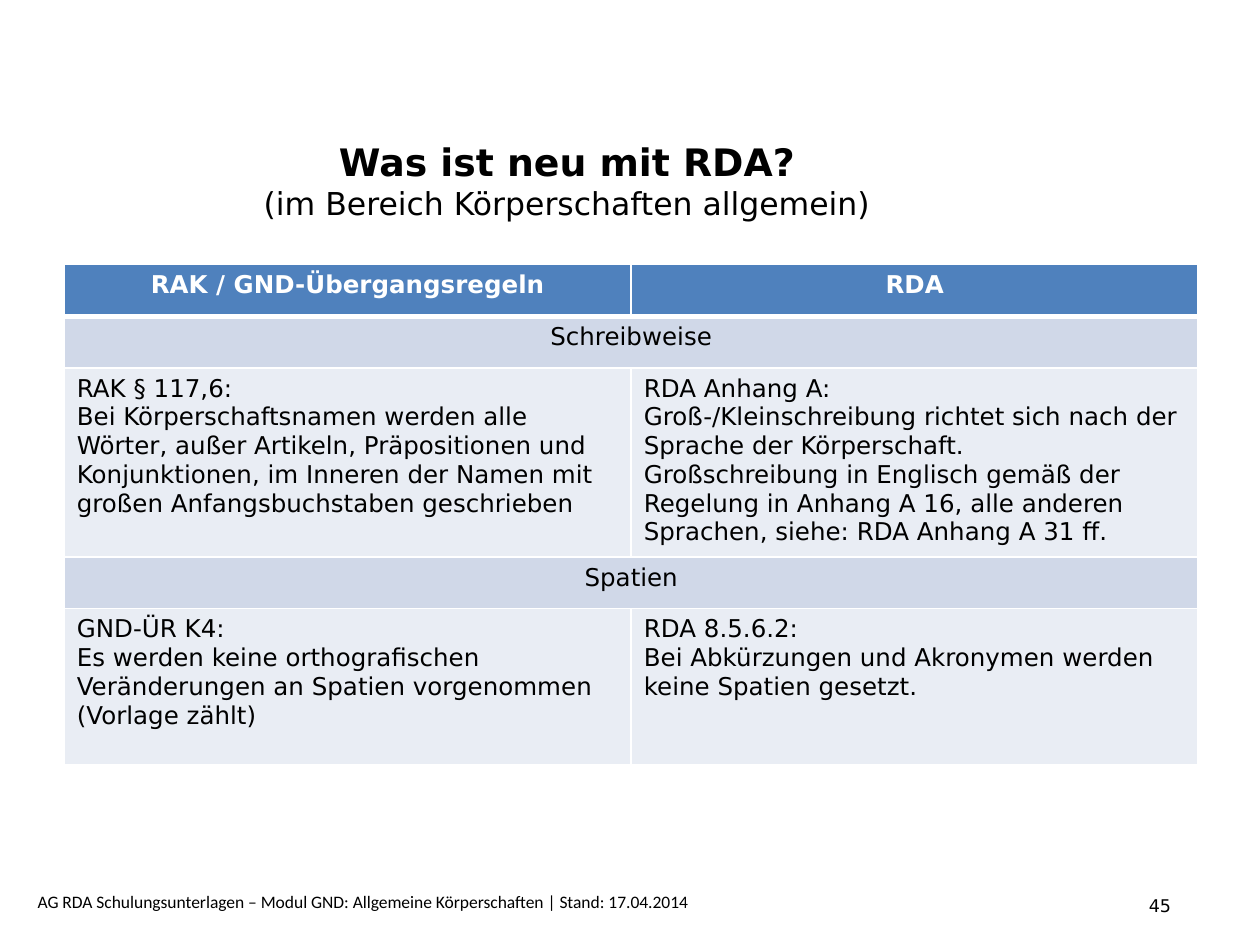
from dataclasses import dataclass

from lxml.etree import SubElement
from pptx import Presentation
from pptx.dml.color import RGBColor as RGB
from pptx.enum.text import MSO_ANCHOR, MSO_AUTO_SIZE, PP_ALIGN
from pptx.oxml.ns import qn
from pptx.util import Inches, Pt


@dataclass(frozen=True)
class Theme:
    font: str = "DejaVu Sans"
    footer_font: str = "Calibri"
    text: str = "000000"
    white: str = "FFFFFF"
    header: str = "4F81BD"
    section: str = "D0D8E8"
    body: str = "E9EDF4"
    title_size: float = 21.6
    subtitle_size: float = 18
    table_size: float = 14
    footer_size: float = 10


THEME = Theme()

HEADINGS = ["RAK / GND-Übergangsregeln", "RDA"]
SECTIONS = [
    ("Schreibweise", 1.47, [
        ["RAK § 117,6:",
         "Bei Körperschaftsnamen werden alle Wörter, außer Artikeln, Präpositionen und "
         "Konjunktionen, im Inneren der Namen mit großen Anfangsbuchstaben geschrieben"],
        ["RDA Anhang A:",
         "Groß-/Kleinschreibung richtet sich nach der Sprache der Körperschaft.",
         "Großschreibung in Englisch gemäß der Regelung in Anhang A 16, alle anderen "
         "Sprachen, siehe: RDA Anhang A 31 ff."],
    ]),
    ("Spatien", 1.24, [
        ["GND-ÜR K4:",
         "Es werden keine orthografischen Veränderungen an Spatien vorgenommen "
         "(Vorlage zählt)"],
        ["RDA 8.5.6.2:",
         "Bei Abkürzungen und Akronymen werden keine Spatien gesetzt."],
    ]),
]
ROW_HEIGHT = 0.41


def add_run(p, text, size, color=THEME.text, bold=False, font=THEME.font):
    r = p.add_run()
    r.text = text
    r.font.name = font
    r.font.size = Pt(size)
    r.font.bold = bold
    r.font.color.rgb = RGB.from_string(color)


def add_title(s, title, subtitle):
    sp = s.shapes.title
    sp.left, sp.top, sp.width, sp.height = (Inches(v) for v in (0, 1.08, 9, 0.7))
    tf = sp.text_frame
    tf.word_wrap = True
    tf.auto_size = MSO_AUTO_SIZE.NONE
    tf.vertical_anchor = MSO_ANCHOR.MIDDLE
    p = tf.paragraphs[0]
    p.alignment = PP_ALIGN.CENTER
    add_run(p, title, THEME.title_size, bold=True)
    p.add_line_break()
    add_run(p, subtitle, THEME.subtitle_size)


def add_footer_text(s, text, left, top, width, height, font):
    tf = s.shapes.add_textbox(*(Inches(v) for v in (left, top, width, height))).text_frame
    tf.word_wrap = True
    add_run(tf.paragraphs[0], text, THEME.footer_size, font=font)


def set_borders(cell, top=1, bottom=1):
    """Draw white lines around a cell; widths are in points."""
    tc_pr = cell._tc.get_or_add_tcPr()
    for side, width in (("L", 1), ("R", 1), ("T", top), ("B", bottom)):
        ln = SubElement(tc_pr, qn(f"a:ln{side}"), w=str(Pt(width)))
        fill = SubElement(ln, qn("a:solidFill"))
        SubElement(fill, qn("a:srgbClr"), val=THEME.white)


def fill_cell(cell, lines, fill, color=THEME.text, bold=False, align=PP_ALIGN.LEFT):
    cell.fill.solid()
    cell.fill.fore_color.rgb = RGB.from_string(fill)
    tf = cell.text_frame
    for i, line in enumerate(lines):
        p = tf.add_paragraph() if i else tf.paragraphs[0]
        p.alignment = align
        add_run(p, line, THEME.table_size, color, bold)


def add_comparison(s):
    heights = [ROW_HEIGHT]
    for _, height, _ in SECTIONS:
        heights += [ROW_HEIGHT, height]
    table = s.shapes.add_table(len(heights), len(HEADINGS), Inches(0.51), Inches(2.1),
                               Inches(9), Inches(sum(heights))).table
    for i, height in enumerate(heights):
        table.rows[i].height = Inches(height)
        for cell in table.rows[i].cells:
            set_borders(cell, top=3 if i == 1 else 1, bottom=3 if i == 0 else 1)

    for col, heading in enumerate(HEADINGS):
        fill_cell(table.cell(0, col), [heading], THEME.header, THEME.white, True,
                  PP_ALIGN.CENTER)
    for i, (name, _, columns) in enumerate(SECTIONS):
        row = 1 + 2 * i
        table.cell(row, 0).merge(table.cell(row, 1))
        fill_cell(table.cell(row, 0), [name], THEME.section, align=PP_ALIGN.CENTER)
        for col, lines in enumerate(columns):
            fill_cell(table.cell(row + 1, col), lines, THEME.body)


def main():
    prs = Presentation()
    prs.slide_width, prs.slide_height = Inches(10), Inches(7.5)
    s = prs.slides.add_slide(prs.slide_layouts[5])
    add_footer_text(s, "45", 9.02, 7.05, 0.79, 0.32, THEME.font)
    add_footer_text(s, "AG RDA Schulungsunterlagen – Modul GND: Allgemeine Körperschaften "
                    "| Stand: 17.04.2014", 0.2, 7.02, 7.01, 0.27, THEME.footer_font)
    add_title(s, "Was ist neu mit RDA?", "(im Bereich Körperschaften allgemein)")
    add_comparison(s)
    prs.save("out.pptx")


if __name__ == "__main__":
    main()
